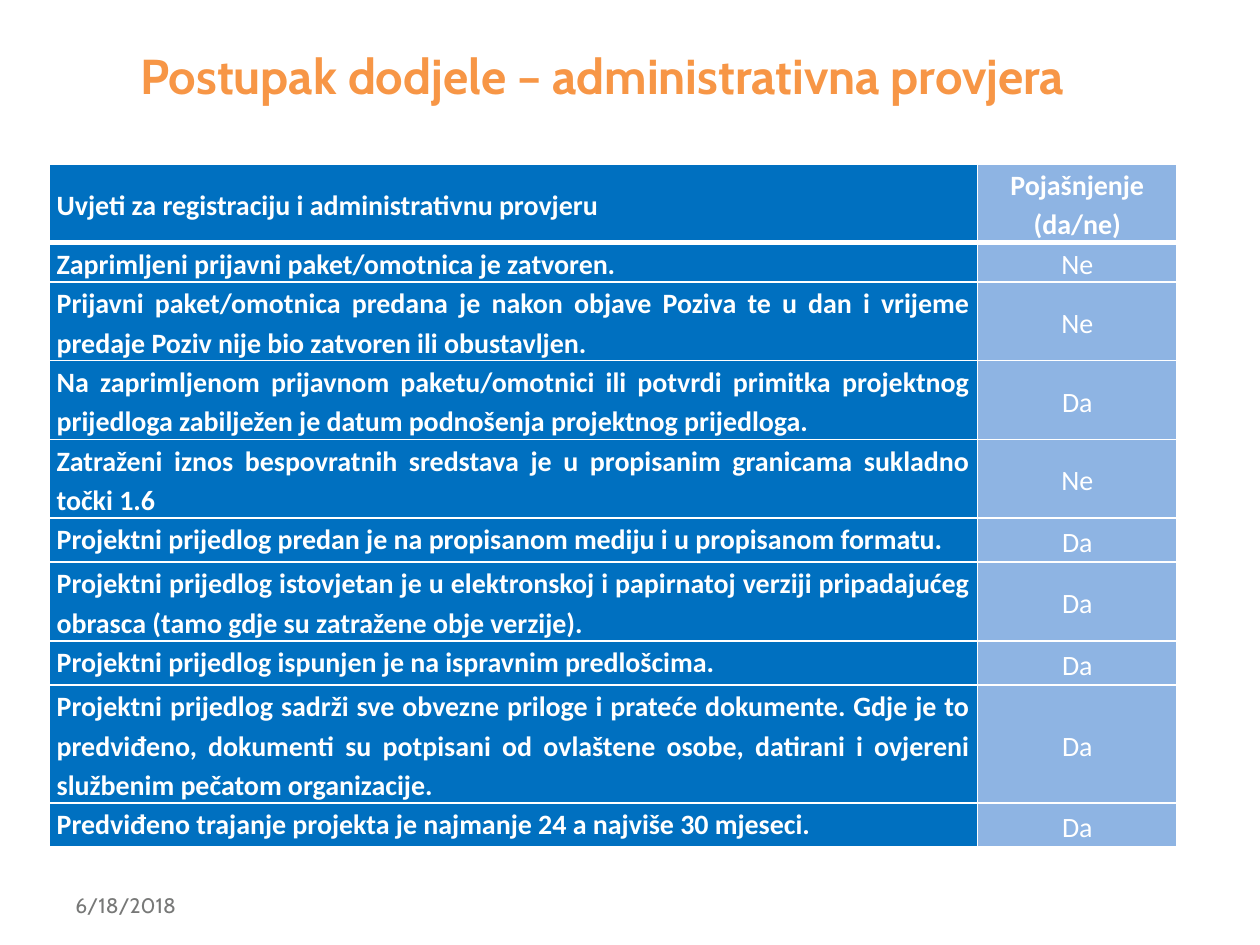
from lxml import etree
from pptx import Presentation
from pptx.dml.color import RGBColor
from pptx.enum.text import MSO_ANCHOR, PP_ALIGN
from pptx.oxml.ns import qn
from pptx.util import Inches, Pt

MIDDLE, TOP = MSO_ANCHOR.MIDDLE, MSO_ANCHOR.TOP
CENTER, JUSTIFY, LEFT = PP_ALIGN.CENTER, PP_ALIGN.JUSTIFY, PP_ALIGN.LEFT

TITLE = "Postupak dodjele – administrativna provjera"
DATE = "6/18/2018"
HEADER = ("Uvjeti za registraciju i administrativnu provjeru", "Pojašnjenje (da/ne)")
CHECKS = [
    ("Zaprimljeni prijavni paket/omotnica je zatvoren.", "Ne"),
    ("Prijavni paket/omotnica predana je nakon objave Poziva te u dan i vrijeme "
     "predaje Poziv nije bio zatvoren ili obustavljen.", "Ne"),
    ("Na zaprimljenom prijavnom paketu/omotnici ili potvrdi primitka projektnog "
     "prijedloga zabilježen je datum podnošenja projektnog prijedloga.", "Da"),
    ("Zatraženi iznos bespovratnih sredstava je u propisanim granicama sukladno "
     "točki 1.6", "Ne"),
    ("Projektni prijedlog predan je na propisanom mediju i u propisanom formatu.", "Da"),
    ("Projektni prijedlog istovjetan je u elektronskoj i papirnatoj verziji "
     "pripadajućeg obrasca (tamo gdje su zatražene obje verzije).", "Da"),
    ("Projektni prijedlog ispunjen je na ispravnim predlošcima.", "Da"),
    ("Projektni prijedlog sadrži sve obvezne priloge i prateće dokumente. Gdje je to "
     "predviđeno, dokumenti su potpisani od ovlaštene osobe, datirani i ovjereni "
     "službenim pečatom organizacije.", "Da"),
    ("Predviđeno trajanje projekta je najmanje 24 a najviše 30 mjeseci.", "Da"),
]
COLUMN_WIDTHS = (7.37, 1.58)
ROW_HEIGHTS = (0.58, 0.29, 0.58, 0.58, 0.58, 0.35, 0.58, 0.35, 0.87, 0.35)
COLUMN_FILLS = ("0070C0", "8EB4E3")
WHITE, ORANGE, GREY = "FFFFFF", "F79646", "777877"


def rgb(value):
    return RGBColor.from_string(value)


def write(frame, text, font_name, size, color, bold, align, anchor):
    frame.word_wrap = True
    frame.vertical_anchor = anchor
    paragraph = frame.paragraphs[0]
    paragraph.alignment = align
    run = paragraph.add_run()
    run.text = text
    font = run.font
    font.name, font.size, font.bold = font_name, Pt(size), bold
    font.color.rgb = rgb(color)
    return paragraph


def add_borders(cell, top, bottom):
    properties = cell._tc.get_or_add_tcPr()
    sides = (("a:lnL", 1), ("a:lnR", 1), ("a:lnT", top), ("a:lnB", bottom))
    for index, (tag, width) in enumerate(sides):
        line = etree.Element(qn(tag), w=str(Pt(width)))
        fill = etree.SubElement(line, qn("a:solidFill"))
        etree.SubElement(fill, qn("a:srgbClr"), val=WHITE)
        properties.insert(index, line)


def add_checks_table(slide):
    rows = [HEADER, *CHECKS]
    table = slide.shapes.add_table(
        len(rows), len(COLUMN_WIDTHS), Inches(0.39), Inches(1.3),
        Inches(sum(COLUMN_WIDTHS)), Inches(sum(ROW_HEIGHTS))).table
    for column, width in zip(table.columns, COLUMN_WIDTHS):
        column.width = Inches(width)
    for row, height in zip(table.rows, ROW_HEIGHTS):
        row.height = Inches(height)
    for r, texts in enumerate(rows):
        for c, text in enumerate(texts):
            cell = table.cell(r, c)
            is_header, is_condition = r == 0, c == 0
            cell.margin_left = cell.margin_right = Inches(0.06)
            cell.margin_top = cell.margin_bottom = 0
            cell.fill.solid()
            cell.fill.fore_color.rgb = rgb(COLUMN_FILLS[c])
            anchor = TOP if is_condition and not is_header else MIDDLE
            paragraph = write(cell.text_frame, text, "Calibri", 16, WHITE,
                              is_header or is_condition,
                              JUSTIFY if is_condition else CENTER, anchor)
            cell.vertical_anchor = anchor
            paragraph.line_spacing = 1.15
            add_borders(cell, 3 if r == 1 else 1, 3 if is_header else 1)


def main():
    """Build the administrative check slide."""
    deck = Presentation()
    deck.slide_width, deck.slide_height = Inches(10), Inches(7.5)
    slide = deck.slides.add_slide(deck.slide_layouts[5])

    title = slide.shapes.title
    title.left, title.top = Inches(0.91), Inches(-0.03)
    title.width, title.height = Inches(7.91), Inches(1.25)
    title.text_frame.margin_right = Inches(0.27)
    write(title.text_frame, TITLE, "Cabin", 28, ORANGE, True, CENTER, MIDDLE)

    add_checks_table(slide)

    date = slide.shapes.add_textbox(Inches(0.5), Inches(6.98), Inches(2.33), Inches(0.4))
    write(date.text_frame, DATE, "Cabin", 12, GREY, False, LEFT, MIDDLE)

    deck.save("out.pptx")


if __name__ == "__main__":
    main()
